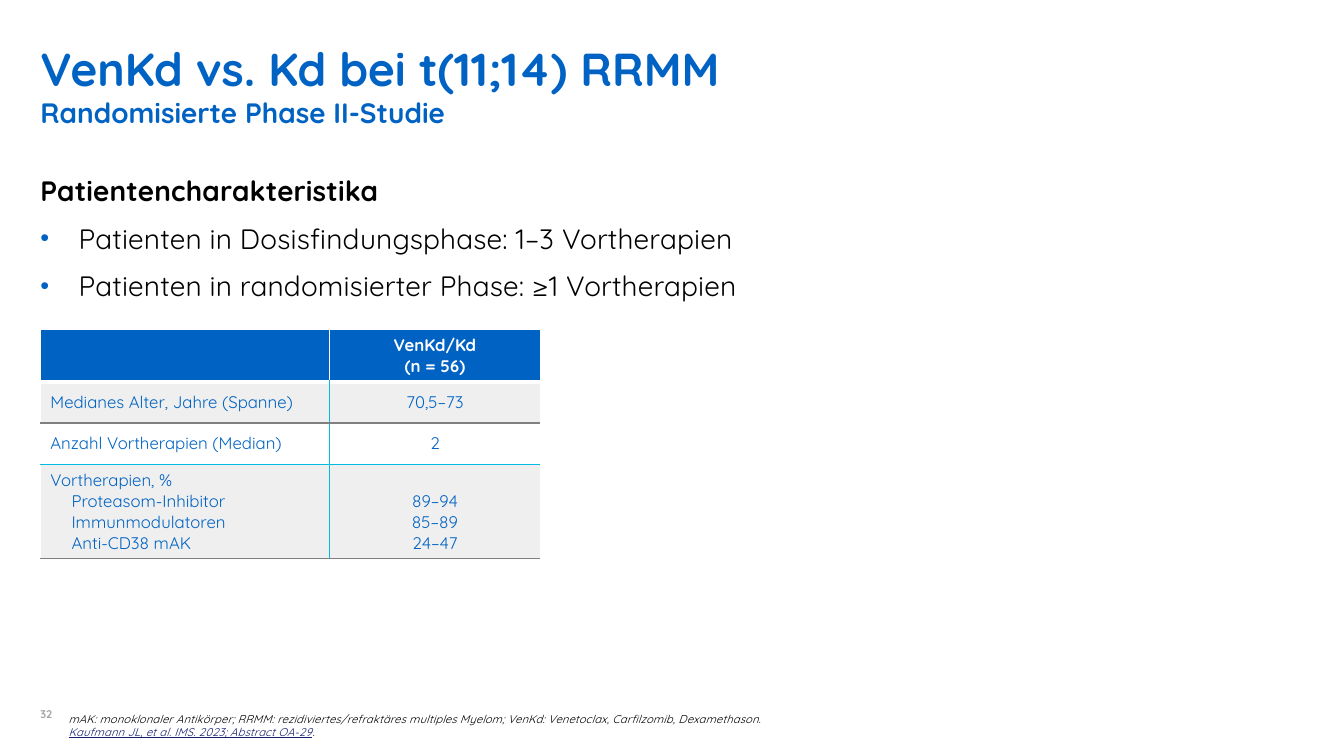
from lxml import etree
from pptx import Presentation
from pptx.dml.color import RGBColor
from pptx.enum.text import MSO_ANCHOR, MSO_AUTO_SIZE, PP_ALIGN
from pptx.oxml.ns import qn
from pptx.util import Inches, Pt

LEFT, CENTER = PP_ALIGN.LEFT, PP_ALIGN.CENTER
TOP, MIDDLE, BOTTOM = MSO_ANCHOR.TOP, MSO_ANCHOR.MIDDLE, MSO_ANCHOR.BOTTOM
NO_AUTOFIT = MSO_AUTO_SIZE.NONE

FONT = "Quicksand"
BLUE = RGBColor(0x00, 0x63, 0xC3)
CYAN = RGBColor(0x00, 0xBC, 0xE3)
NAVY = RGBColor(0x15, 0x1F, 0x6D)
GREY = RGBColor(0xA6, 0xA6, 0xA6)
RULE_GREY = RGBColor(0x80, 0x80, 0x80)
LIGHT = RGBColor(0xEF, 0xEF, 0xEF)
WHITE = RGBColor(0xFF, 0xFF, 0xFF)
BLACK = RGBColor(0x00, 0x00, 0x00)

BULLETS = [
    "Patienten in Dosisfindungsphase: 1–3 Vortherapien",
    "Patienten in randomisierter Phase: ≥1 Vortherapien",
]
TABLE_ROWS = [
    ("", "VenKd/Kd\v(n = 56)"),
    ("Medianes Alter, Jahre (Spanne)", "70,5–73"),
    ("Anzahl Vortherapien (Median)", "2"),
    ("Vortherapien, %\nProteasom-Inhibitor\nImmunmodulatoren\nAnti-CD38 mAK",
     "89–94\n85–89\n24–47"),
]
COLUMN_WIDTHS = [2.87, 2.09]
ROW_HEIGHTS = [0.5, 0.41, 0.41, 0.93]
ROW_FILLS = [BLUE, LIGHT, None, LIGHT]
# Colour and width of the line below each row
ROW_RULES = [(WHITE, 3), (RULE_GREY, 1), (CYAN, 1), (RULE_GREY, 1)]


def format_run(run, size, color, bold=False, italic=False, spacing=None):
    font = run.font
    font.name, font.size = FONT, Pt(size)
    font.bold, font.italic = bold, italic
    font.color.rgb = color
    if spacing is not None:
        run._r.get_or_add_rPr().set("spc", str(spacing))


def prepare_frame(shape, anchor=TOP):
    frame = shape.text_frame
    frame.word_wrap = True
    frame.auto_size = NO_AUTOFIT
    frame.vertical_anchor = anchor
    frame.margin_left = frame.margin_right = 0
    frame.margin_top = frame.margin_bottom = 0
    return frame


def add_text_area(slide, box, anchor=TOP):
    shape = slide.shapes.add_textbox(*[Inches(value) for value in box])
    return prepare_frame(shape, anchor)


def add_bullet(paragraph):
    properties = paragraph._p.get_or_add_pPr()
    properties.set("marL", str(Inches(0.38)))
    properties.set("indent", str(-Inches(0.38)))
    color = etree.SubElement(properties, qn("a:buClr"))
    etree.SubElement(color, qn("a:srgbClr"), val=str(BLUE))
    etree.SubElement(properties, qn("a:buSzPct"), val="90000")
    etree.SubElement(properties, qn("a:buFont"), typeface="Arial")
    etree.SubElement(properties, qn("a:buChar"), char="•")


def set_borders(cell, borders):
    """Borders are (colour, width) pairs, or None, for left, right, top, bottom."""
    properties = cell._tc.get_or_add_tcPr()
    for index, (side, border) in enumerate(zip("LRTB", borders)):
        line = etree.Element(qn(f"a:ln{side}"))
        if border:
            color, width = border
            line.set("w", str(Pt(width)))
            fill = etree.SubElement(line, qn("a:solidFill"))
            etree.SubElement(fill, qn("a:srgbClr"), val=str(color))
        else:
            etree.SubElement(line, qn("a:noFill"))
        properties.insert(index, line)


def build_title(slide, box):
    title = slide.shapes.title
    title.left, title.top, title.width, title.height = map(Inches, box)
    paragraph = prepare_frame(title).paragraphs[0]
    paragraph.text = "VenKd vs. Kd bei t(11;14) RRMM \vRandomisierte Phase II-Studie"
    paragraph.alignment = LEFT
    paragraph.line_spacing = 1.0
    for run, size in zip(paragraph.runs, (33, 20)):
        format_run(run, size, BLUE, bold=True)


def build_body(slide, box):
    frame = add_text_area(slide, box)
    frame.text = "\n".join(["Patientencharakteristika"] + BULLETS)
    for index, paragraph in enumerate(frame.paragraphs):
        paragraph.space_after = Pt(10)
        if index:
            add_bullet(paragraph)
        format_run(paragraph.runs[0], 20, BLACK, bold=index == 0, spacing=10)


def build_table(slide, left, top):
    shape = slide.shapes.add_table(
        len(TABLE_ROWS), len(COLUMN_WIDTHS), Inches(left), Inches(top),
        Inches(sum(COLUMN_WIDTHS)), Inches(sum(ROW_HEIGHTS)))
    table = shape.table
    table.horz_banding = False
    for column, width in zip(table.columns, COLUMN_WIDTHS):
        column.width = Inches(width)
    for row_index, texts in enumerate(TABLE_ROWS):
        table.rows[row_index].height = Inches(ROW_HEIGHTS[row_index])
        header = row_index == 0
        divider = (WHITE if header else CYAN, 1)
        above = (WHITE, 1) if header else ROW_RULES[row_index - 1]
        below = ROW_RULES[row_index]
        for column_index, text in enumerate(texts):
            cell = table.cell(row_index, column_index)
            cell.text = text
            # The three percentages line up with the last lines on the left
            cell.vertical_anchor = BOTTOM if text.startswith("89") else MIDDLE
            fill = ROW_FILLS[row_index]
            if fill is None:
                cell.fill.background()
            else:
                cell.fill.solid()
                cell.fill.fore_color.rgb = fill
            outer = (WHITE, 1) if header else None
            sides = ((WHITE, 1), divider) if column_index == 0 else (divider, outer)
            set_borders(cell, (*sides, above, below))
            for line_index, paragraph in enumerate(cell.text_frame.paragraphs):
                paragraph.alignment = CENTER if column_index else LEFT
                if column_index == 0 and line_index:
                    paragraph._p.get_or_add_pPr().set("marL", str(Inches(0.21)))
                for run in paragraph.runs:
                    format_run(run, 12, WHITE if header else BLUE, bold=header)


def build_footer(slide, number_box, notes_box):
    # Slide number
    frame = add_text_area(slide, number_box, BOTTOM)
    frame.text = "32"
    format_run(frame.paragraphs[0].runs[0], 8, GREY, bold=True)

    # Abbreviations and reference
    frame = add_text_area(slide, notes_box, BOTTOM)
    frame.text = ("mAK: monoklonaler Antikörper; RRMM: rezidiviertes/refraktäres multiples "
                  "Myelom; VenKd: Venetoclax, Carfilzomib, Dexamethason.\n"
                  "Kaufmann JL, et al. IMS. 2023; Abstract OA-29")
    abbreviations, reference = frame.paragraphs
    format_run(abbreviations.runs[0], 8, BLACK, italic=True, spacing=10)
    format_run(reference.runs[0], 8, NAVY, italic=True, spacing=10)
    reference.runs[0].font.underline = True
    full_stop = reference.add_run()
    full_stop.text = "."
    format_run(full_stop, 8, BLACK, italic=True, spacing=10)


def main():
    presentation = Presentation()
    presentation.slide_width = Inches(13.33)
    presentation.slide_height = Inches(7.5)
    slide = presentation.slides.add_slide(presentation.slide_layouts[5])
    build_title(slide, (0.4, 0.4, 12.53, 0.89))
    build_body(slide, (0.4, 1.72, 7.47, 1.45))
    build_table(slide, 0.4, 3.27)
    build_footer(slide, (0.4, 6.92, 0.25, 0.23), (0.68, 6.79, 9.64, 0.54))
    presentation.save("out.pptx")


if __name__ == "__main__":
    main()
